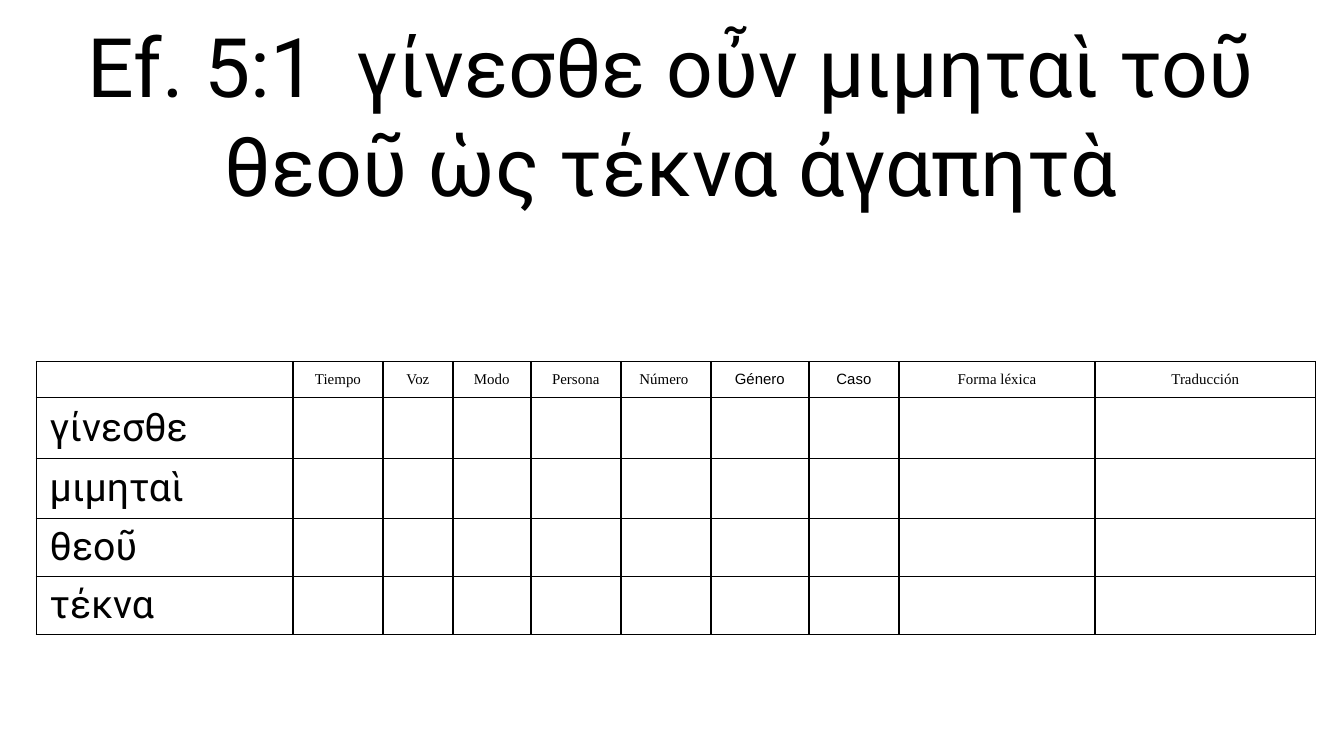
"""Build a Greek parsing worksheet slide for Ephesians 5:1."""
from lxml.etree import SubElement
from pptx import Presentation
from pptx.dml.color import RGBColor
from pptx.enum.text import MSO_ANCHOR, PP_ALIGN
from pptx.oxml.ns import qn
from pptx.util import Inches, Pt

BLACK = RGBColor(0, 0, 0)
GREEK_FONT = "Roboto"
VERSE = "Ef. 5:1  γίνεσθε οὖν μιμηταὶ τοῦ θεοῦ ὡς τέκνα ἀγαπητὰ"
HEADERS = ["", "Tiempo", "Voz", "Modo", "Persona", "Número ", "Género", "Caso",
           "Forma léxica", "Traducción"]
ARIAL_HEADERS = {"Género", "Caso"}
WORDS = ["γίνεσθε", "μιμηταὶ", "θεοῦ", "τέκνα"]
COLUMN_WIDTHS = [1.91, 0.67, 0.52, 0.58, 0.67, 0.67, 0.73, 0.67, 1.46, 1.64]
ROW_HEIGHTS = [0.27, 0.45, 0.45, 0.43, 0.43]


def write(frame, text, font_name, size, align):
    """Put one styled paragraph into a text frame."""
    para = frame.paragraphs[0]
    para.text = text
    para.alignment = align
    para.font.name = font_name
    para.font.size = Pt(size)
    para.font.color.rgb = BLACK
    if not text:
        SubElement(para._p, qn("a:endParaRPr"), sz=str(size * 100))


def add_title(page):
    """Add the verse across the top."""
    box = page.shapes.add_textbox(Inches(0.35), Inches(0.06), Inches(9.29), Inches(1.58))
    frame = box.text_frame
    frame.word_wrap = True
    frame.vertical_anchor = MSO_ANCHOR.MIDDLE
    write(frame, VERSE, GREEK_FONT, 44, PP_ALIGN.CENTER)


def set_borders(cell, top):
    """Draw the four cell borders, heavier at the sides."""
    properties = cell._tc.get_or_add_tcPr()
    for side, width in (("L", 1), ("R", 1), ("T", top), ("B", 0.75)):
        line = SubElement(properties, qn(f"a:ln{side}"), w=str(Pt(width)))
        fill = SubElement(line, qn("a:solidFill"))
        SubElement(fill, qn("a:srgbClr"), val=str(BLACK))


def style_cell(cell, top):
    """Set the borders, empty fill, margins and anchor of a cell."""
    set_borders(cell, top)
    cell.fill.background()
    cell.vertical_anchor = MSO_ANCHOR.MIDDLE
    cell.margin_left = cell.margin_right = Inches(0.1)
    cell.margin_top = cell.margin_bottom = Inches(0.04)


def add_parsing_table(page):
    """Add the grid with a header row and one row per Greek word."""
    shape = page.shapes.add_table(
        len(ROW_HEIGHTS), len(COLUMN_WIDTHS), Inches(0.27), Inches(2.69),
        Inches(sum(COLUMN_WIDTHS)), Inches(sum(ROW_HEIGHTS)))
    table = shape.table
    table.first_row = table.horz_banding = False
    for column, width in zip(table.columns, COLUMN_WIDTHS):
        column.width = Inches(width)
    rows = [HEADERS] + [[word] + [""] * (len(HEADERS) - 1) for word in WORDS]
    for row_index, texts in enumerate(rows):
        table.rows[row_index].height = Inches(ROW_HEIGHTS[row_index])
        for column_index, text in enumerate(texts):
            cell = table.cell(row_index, column_index)
            style_cell(cell, 0.75 if row_index else 1)
            if row_index and column_index == 0:
                write(cell.text_frame, text, GREEK_FONT, 21, PP_ALIGN.LEFT)
            else:
                font_name = "Arial" if text in ARIAL_HEADERS else "Times New Roman"
                write(cell.text_frame, text, font_name, 8, PP_ALIGN.CENTER)


def main():
    """Create and save the deck."""
    deck = Presentation()
    deck.slide_width = Inches(10)
    deck.slide_height = deck.slide_width * 9 // 16
    page = deck.slides.add_slide(deck.slide_layouts[6])
    add_title(page)
    add_parsing_table(page)
    deck.save("out.pptx")


if __name__ == "__main__":
    main()
